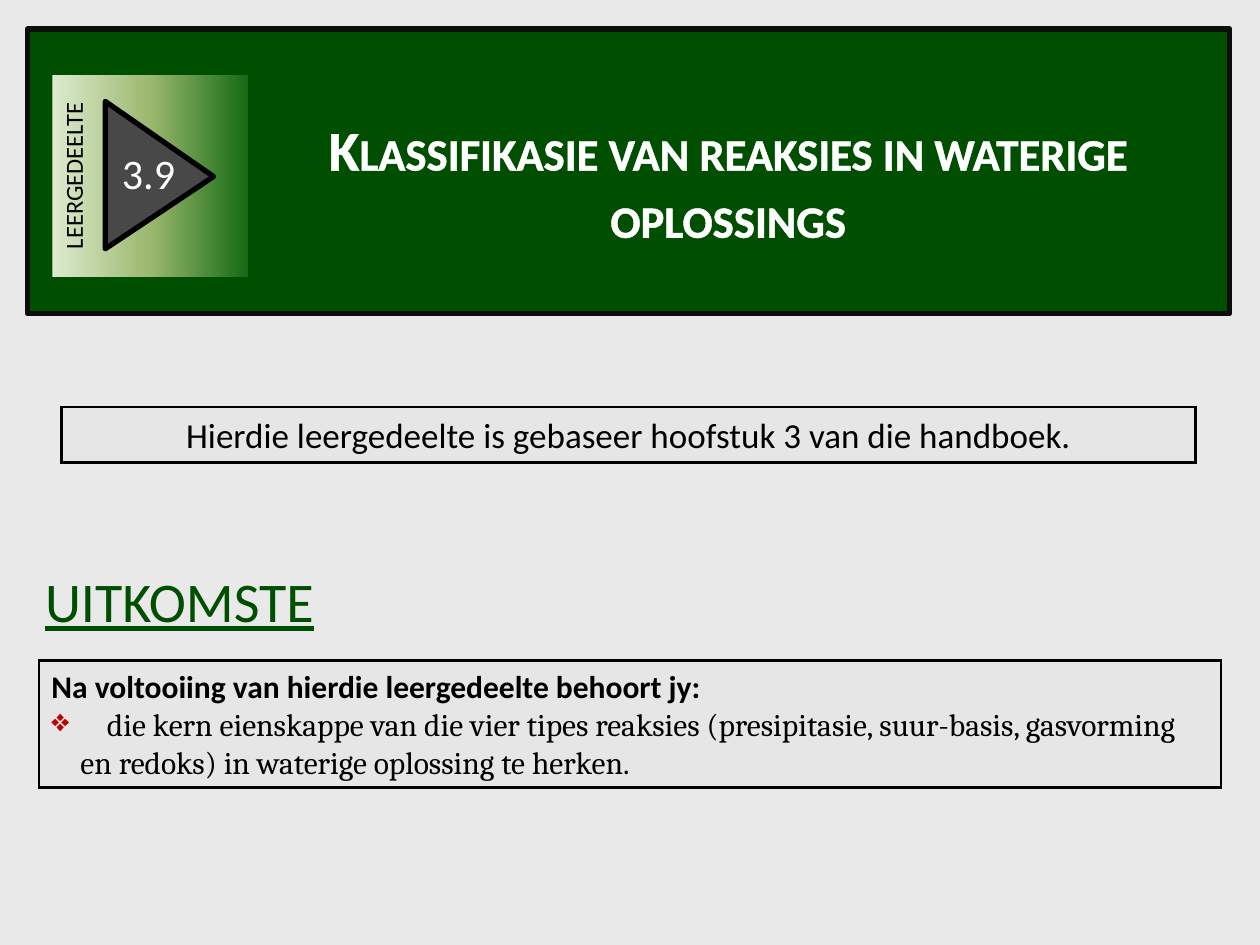
from lxml.etree import SubElement
from pptx import Presentation
from pptx.dml.color import RGBColor
from pptx.enum.shapes import MSO_SHAPE
from pptx.enum.text import MSO_ANCHOR, MSO_AUTO_SIZE, PP_ALIGN
from pptx.oxml import parse_xml
from pptx.oxml.ns import qn
from pptx.util import Inches, Pt

NAMESPACE = 'xmlns:a="http://schemas.openxmlformats.org/drawingml/2006/main"'
COLORS = {
    "background": "E9E9E9", "green": "004E00", "border": "0D0D0D",
    "black": "000000", "white": "FFFFFF", "panel": "E6E6E6",
    "triangle": "484848", "bullet": "C00000",
    "light": "DDEBCF", "middle": "9CB86E", "dark": "156B13",
}


def add_box(shapes, kind, box, fill=None, line=None, width=1.5, join="miter"):
    shape = shapes.add_shape(kind, *[Inches(value) for value in box])
    shape.shadow.inherit = False
    if fill:
        shape.fill.solid()
        shape.fill.fore_color.rgb = RGBColor.from_string(COLORS[fill])
    if line:
        shape.line.color.rgb = RGBColor.from_string(COLORS[line])
        shape.line.width = Pt(width)
        SubElement(shape.line._get_or_add_ln(), qn(f"a:{join}"))
    else:
        shape.line.fill.background()
    return shape


def add_text(shape, text, size, color="black", font="Calibri", bold=False,
             align=PP_ALIGN.LEFT, anchor=MSO_ANCHOR.TOP, wrap=True, first=True):
    frame = shape.text_frame
    frame.word_wrap = wrap
    frame.auto_size = MSO_AUTO_SIZE.SHAPE_TO_FIT_TEXT
    frame.vertical_anchor = anchor
    paragraph = frame.paragraphs[0] if first else frame.add_paragraph()
    paragraph.alignment = align
    run = paragraph.add_run()
    run.text = text
    run.font.size = Pt(size)
    run.font.name = font
    run.font.bold = bold
    run.font.color.rgb = RGBColor.from_string(COLORS[color])
    return paragraph


presentation = Presentation()
presentation.slide_width = Inches(10)
presentation.slide_height = Inches(7.5)
slide = presentation.slides.add_slide(presentation.slide_layouts[6])
slide.background.fill.solid()
slide.background.fill.fore_color.rgb = RGBColor.from_string(COLORS["background"])
shapes = slide.shapes

add_box(shapes, MSO_SHAPE.RECTANGLE, (0.22, 0.23, 9.54, 2.26),
        "green", "border", 3, "round")

title = shapes.add_textbox(Inches(2.11), Inches(0.86), Inches(7.34), Inches(1.18))
title_paragraph = add_text(title, "Klassifikasie van reaksies in waterige oplossings",
                           32, "white", bold=True, align=PP_ALIGN.CENTER)
title_paragraph.runs[0].font._element.set("cap", "small")

badge = shapes.add_group_shape()
label = add_box(badge.shapes, MSO_SHAPE.RECTANGLE, (0.39, 0.62, 1.6, 1.55))
label.rotation = 270
label.fill.gradient()
label.fill.gradient_angle = 270
stops = label.fill._xPr.find(qn("a:gradFill")).find(qn("a:gsLst"))
for stop in list(stops):
    stops.remove(stop)
for position, color in ((0, "light"), (50, "middle"), (100, "dark")):
    stops.append(parse_xml(f'<a:gs {NAMESPACE} pos="{position * 1000}">'
                           f'<a:srgbClr val="{COLORS[color]}"/></a:gs>'))
add_text(label, "LEERGEDEELTE", 14, align=PP_ALIGN.CENTER)

triangle = add_box(badge.shapes, MSO_SHAPE.ISOSCELES_TRIANGLE, (0.68, 0.96, 1.17, 0.86),
                   "triangle", "black", 3, "round")
triangle.rotation = 90
triangle.adjustments[0] = 0.51

number = badge.shapes.add_textbox(Inches(0.87), Inches(1.12), Inches(0.63), Inches(0.5))
add_text(number, "3.9", 24, "white", wrap=False)

heading = shapes.add_textbox(Inches(0.26), Inches(4.45), Inches(2.67), Inches(0.64))
heading_paragraph = add_text(heading, "UITKOMSTE", 32, "green")
heading_paragraph.runs[0].font.underline = True

for paragraph, color, width in ((title_paragraph, "white", 0.75),
                                (heading_paragraph, "black", 0.25)):
    paragraph.runs[0].font._element.insert(0, parse_xml(
        f'<a:ln {NAMESPACE} w="{Pt(width)}"><a:solidFill>'
        f'<a:srgbClr val="{COLORS[color]}"/></a:solidFill></a:ln>'))

outcomes = add_box(shapes, MSO_SHAPE.RECTANGLE, (0.31, 5.24, 9.38, 1.01), "panel", "black")
add_text(outcomes, "Na voltooiing van hierdie leergedeelte behoort jy:", 18,
         bold=True, anchor=MSO_ANCHOR.MIDDLE)
outcome = add_text(
    outcomes,
    "\tdie kern eienskappe van die vier tipes reaksies (presipitasie, suur-basis, "
    "gasvorming en redoks) in waterige oplossing te herken.",
    18, font="Cambria", anchor=MSO_ANCHOR.MIDDLE, first=False)
properties = outcome._p.get_or_add_pPr()
properties.set("marL", str(Inches(0.23)))
properties.set("indent", str(Inches(-0.23)))
for markup in (
    f'<a:buClr {NAMESPACE}><a:srgbClr val="{COLORS["bullet"]}"/></a:buClr>',
    f'<a:buChar {NAMESPACE} char="❖"/>',
    f'<a:tabLst {NAMESPACE}><a:tab pos="{Inches(0.44)}" algn="l"/></a:tabLst>',
):
    properties.append(parse_xml(markup))

source_note = add_box(shapes, MSO_SHAPE.RECTANGLE, (0.49, 3.23, 9, 0.44), "panel", "black")
add_text(source_note, "Hierdie leergedeelte is gebaseer hoofstuk 3 van die handboek.", 20,
         align=PP_ALIGN.CENTER, anchor=MSO_ANCHOR.MIDDLE)

presentation.save("out.pptx")
